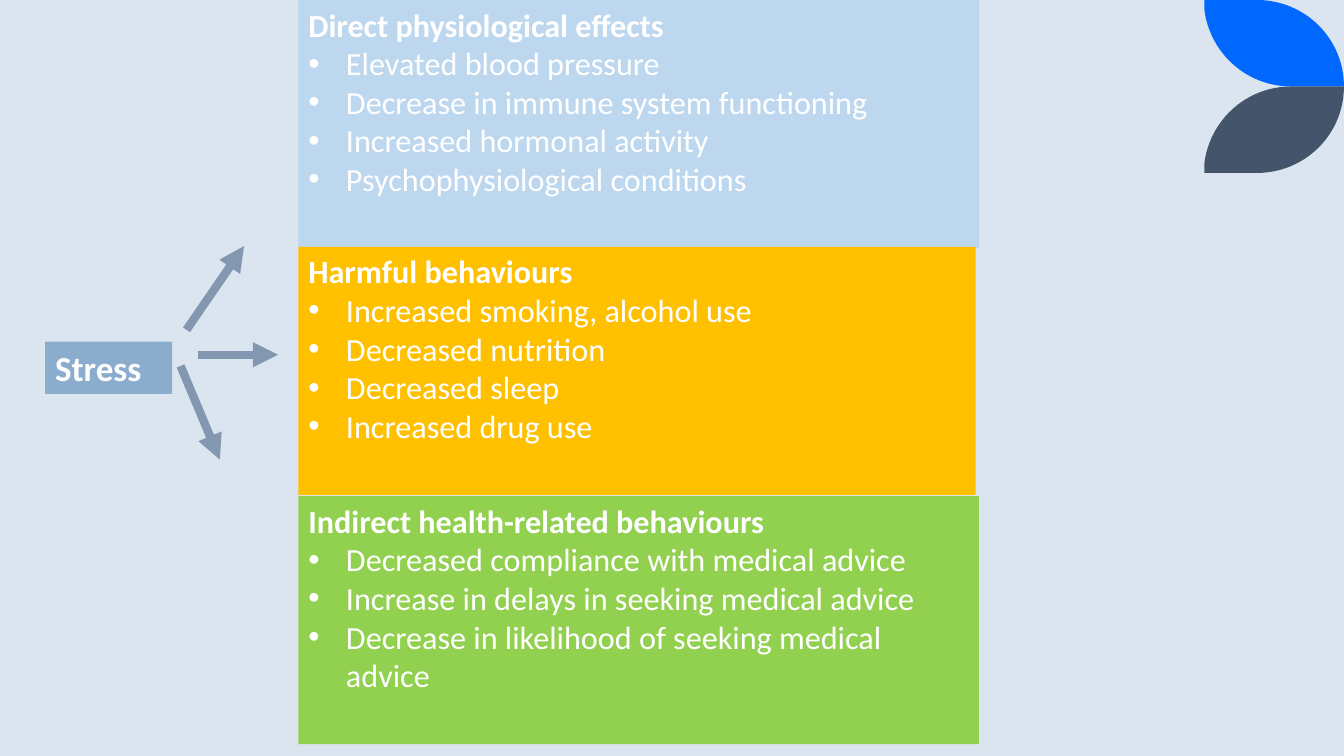
from lxml import etree
from pptx import Presentation
from pptx.dml.color import RGBColor
from pptx.enum.shapes import MSO_CONNECTOR, MSO_SHAPE
from pptx.enum.text import MSO_ANCHOR, PP_ALIGN
from pptx.oxml.ns import qn
from pptx.util import Cm, Pt

RECT = MSO_SHAPE.RECTANGLE
LINE = MSO_CONNECTOR.STRAIGHT
TOP = MSO_ANCHOR.TOP
LEFT = PP_ALIGN.LEFT

WHITE = "FFFFFF"
SLATE = "8497B0"
INDENT = 0.95

# Effects of stress: top, width, fill, heading, points
EFFECTS = [
    (0, 17.15, "BDD7EE", "Direct physiological effects",
     ["Elevated blood pressure", "Decrease in immune system functioning",
      "Increased hormonal activity", "Psychophysiological conditions"]),
    (6.22, 17.07, "FFC000", "Harmful behaviours",
     ["Increased smoking, alcohol use", "Decreased nutrition",
      "Decreased sleep", "Increased drug use"]),
    (12.5, 17.15, "92D050", "Indirect health-related behaviours",
     ["Decreased compliance with medical advice",
      "Increase in delays in seeking medical advice",
      "Decrease in likelihood of seeking medical advice"]),
]

# Arrows from stress: start x, y, end x, y
ARROWS = [
    (4.55, 9.22, 5.54, 11.58),
    (4.98, 8.94, 7.01, 8.94),
    (4.7, 8.31, 6.15, 6.2),
]

# Leaf edges as cubic curves, measured from the top of the slide
TIP = 2.18
OUTER = [(31.67, 0), (32.89, 0), (33.87, 0.97), (33.87, TIP)]
INNER = [(32.54, TIP), (31.4, TIP), (30.48, 1.32), (30.35, 0.23)]


def color(code):
    return RGBColor.from_string(code)


def paint(shape, code):
    shape.fill.solid()
    shape.fill.fore_color.rgb = color(code)
    shape.line.fill.background()
    shape.shadow.inherit = False


def curve(ends, steps=24):
    a, b, c, d = ends
    dots = []
    for step in range(steps + 1):
        t = step / steps
        u = 1 - t
        dots.append(tuple(
            u**3 * a[i] + 3 * u * u * t * b[i] + 3 * u * t * t * c[i] + t**3 * d[i]
            for i in (0, 1)))
    return dots


def add_leaf(slide, code, flip=False):
    dots = [(30.35, 0)] + curve(OUTER) + curve(INNER)
    if flip:
        dots = [(x, 2 * TIP - y) for x, y in dots]
    dots = [(Cm(x), Cm(y)) for x, y in dots]
    form = slide.shapes.build_freeform(*dots[0], scale=1.0)
    form.add_line_segments(dots[1:], close=True)
    paint(form.convert_to_shape(), code)


def add_bullet(para):
    props = para._p.get_or_add_pPr()
    props.set("marL", str(Cm(INDENT)))
    props.set("indent", str(-Cm(INDENT)))
    font = etree.SubElement(props, qn("a:buFont"))
    font.set("typeface", "Arial")
    etree.SubElement(props, qn("a:buChar")).set("char", "•")


def add_text(para, text, size, bold):
    para.alignment = LEFT
    run = para.add_run()
    run.text = text
    style = {"name": "Calibri", "size": Pt(size), "bold": bold}
    for key, value in style.items():
        setattr(run.font, key, value)
    run.font.color.rgb = color(WHITE)


def add_box(slide, place, code, title, size, points=()):
    box = slide.shapes.add_shape(RECT, *map(Cm, place))
    paint(box, code)
    frame = box.text_frame
    for key, value in {"word_wrap": True, "vertical_anchor": TOP}.items():
        setattr(frame, key, value)
    add_text(frame.paragraphs[0], title, size, True)
    for point in points:
        para = frame.add_paragraph()
        add_text(para, point, size, False)
        add_bullet(para)


def add_arrow(slide, ends):
    arrow = slide.shapes.add_connector(LINE, *map(Cm, ends))
    arrow.line.color.rgb = color(SLATE)
    arrow.line.width = Pt(6)
    head = etree.SubElement(arrow.line._get_or_add_ln(), qn("a:tailEnd"))
    head.set("type", "triangle")
    etree.SubElement(arrow._element.spPr, qn("a:effectLst"))


def main():
    deck = Presentation()
    deck.slide_width, deck.slide_height = Cm(33.87), Cm(19.05)
    slide = deck.slides.add_slide(deck.slide_layouts[6])
    slide.background.fill.solid()
    slide.background.fill.fore_color.rgb = color("DAE5EF")

    # Corner leaves
    add_leaf(slide, "0068FF")
    add_leaf(slide, "44546A", flip=True)

    # Cause and effects
    add_box(slide, (1.14, 8.61, 3.2, 1.32), "8AADCD", "Stress", 25)
    for top, width, code, title, points in EFFECTS:
        add_box(slide, (7.52, top, width, 6.25), code, title, 23, points)

    # Arrows
    for ends in ARROWS:
        add_arrow(slide, ends)

    deck.save("out.pptx")


if __name__ == "__main__":
    main()
